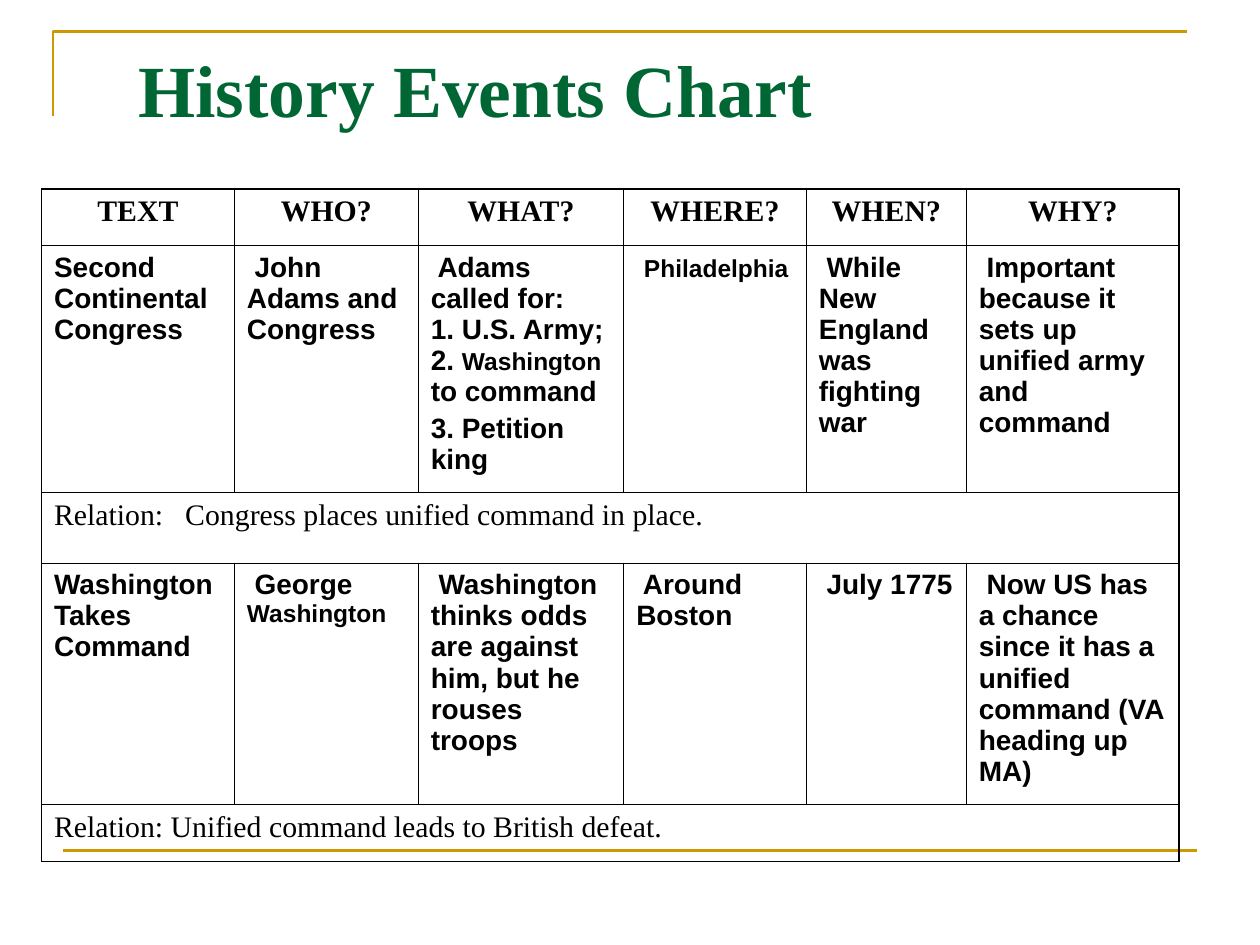
from lxml import etree
from pptx import Presentation
from pptx import util as u
from pptx.dml.color import RGBColor
from pptx.enum import shapes, text
from pptx.oxml.ns import qn

INK = {"gold": "CC9900", "green": "006633", "black": "000000"}
SERIF, SANS = "Times New Roman", "Arial"
COLS = [1.53, 1.46, 1.63, 1.45, 1.27, 1.69]
ROWS = [0.45, 1.87, 0.56, 1.83, 0.45]

# Each cell is a list of paragraphs; words between asterisks are set smaller.
HEADS = ["TEXT", "WHO?", "WHAT?", "WHERE?", "WHEN?", "WHY?"]
GRID = [
    [[head] for head in HEADS],
    [["Second Continental Congress"],
     [" John Adams and Congress"],
     [" Adams called for:", "1. U.S. Army; 2. *Washington* to command", "3. Petition king"],
     [" *Philadelphia*"],
     [" While New England was fighting war"],
     [" Important because it sets up unified army and command"]],
    [["Relation:\tCongress places unified command in place."]],
    [["Washington Takes Command"],
     [" George *Washington*"],
     [" Washington thinks odds are against him, but he rouses troops"],
     [" Around Boston"],
     [" July 1775"],
     [" Now US has a chance since it has a unified command (VA heading up MA)"]],
    [["Relation: Unified command leads to British defeat."]],
]


def style(font, face, size, bold, ink):
    font.name, font.size, font.bold = face, u.Pt(size), bold
    font.color.rgb = RGBColor.from_string(INK[ink])


def border(cell):
    """Draw a thin black line on all four sides of a cell."""
    props = cell._tc.get_or_add_tcPr()
    for spot, side in enumerate("LRTB"):
        line = etree.Element(qn(f"a:ln{side}"), w=str(u.Pt(1)))
        fill = etree.SubElement(line, qn("a:solidFill"))
        etree.SubElement(fill, qn("a:srgbClr"), val=INK["black"])
        props.insert(spot, line)


deck = Presentation()
deck.slide_width, deck.slide_height = u.Inches(10), u.Inches(7.5)
slide = deck.slides.add_slide(deck.slide_layouts[6])

# Gold frame: a corner at the top, a rule at the bottom
pen = slide.shapes.build_freeform(u.Inches(0.42), u.Inches(0.92))
pen.add_line_segments([(u.Inches(0.42), u.Inches(0.25)),
                       (u.Inches(9.42), u.Inches(0.25))], close=False)
corner = pen.convert_to_shape()
corner.shadow.inherit = False
corner.fill.background()
rule = slide.shapes.add_connector(shapes.MSO_CONNECTOR.STRAIGHT, u.Inches(0.5),
                                  u.Inches(6.75), u.Inches(9.5), u.Inches(6.75))
for edge in (corner, rule):
    edge.line.color.rgb = RGBColor.from_string(INK["gold"])
    edge.line.width = u.Pt(1.5)
etree.SubElement(rule._element.spPr, qn("a:effectLst"))

# Title
title = slide.shapes.add_textbox(u.Inches(1), u.Inches(0.3), u.Inches(8.5), u.Inches(1.01))
frame = title.text_frame
frame.word_wrap = True
frame.text = "History Events Chart"
style(frame.paragraphs[0].font, SERIF, 42, True, "green")

# Table
table = slide.shapes.add_table(len(ROWS), len(COLS), u.Inches(0.33), u.Inches(1.5),
                               u.Inches(sum(COLS)), u.Inches(sum(ROWS))).table
table.first_row = table.horz_banding = False
for col, width in zip(table.columns, COLS):
    col.width = u.Inches(width)
for row, height in zip(table.rows, ROWS):
    row.height = u.Inches(height)

for r, line in enumerate(GRID):
    head, wide = r == 0, len(line) == 1
    face, size = (SERIF, 17) if head or wide else (SANS, 16)
    if wide:
        table.cell(r, 0).merge(table.cell(r, len(COLS) - 1))
    for c in range(len(COLS)):
        cell = table.cell(r, c)
        cell.fill.background()
        cell.margin_bottom = 0
        border(cell)
    for c, paras in enumerate(line):
        frame = table.cell(r, c).text_frame
        for n, words in enumerate(paras):
            para = frame.add_paragraph() if n else frame.paragraphs[0]
            if head:
                para.alignment = text.PP_ALIGN.CENTER
            if n == 2:
                para.space_before = u.Pt(3.2)
            if "\t" in words:
                tabs = etree.SubElement(para._p.get_or_add_pPr(), qn("a:tabLst"))
                etree.SubElement(tabs, qn("a:tab"), pos=str(u.Inches(1.04)), algn="l")
            # Row heights are measured from run sizes, so fonts go on the runs
            for k, part in enumerate(words.split("*")):
                if part:
                    run = para.add_run()
                    run.text = part
                    style(run.font, face, 14 if k % 2 else size, not wide, "black")
            etree.SubElement(para._p, qn("a:endParaRPr"), sz=str(size * 100))

deck.save("out.pptx")
